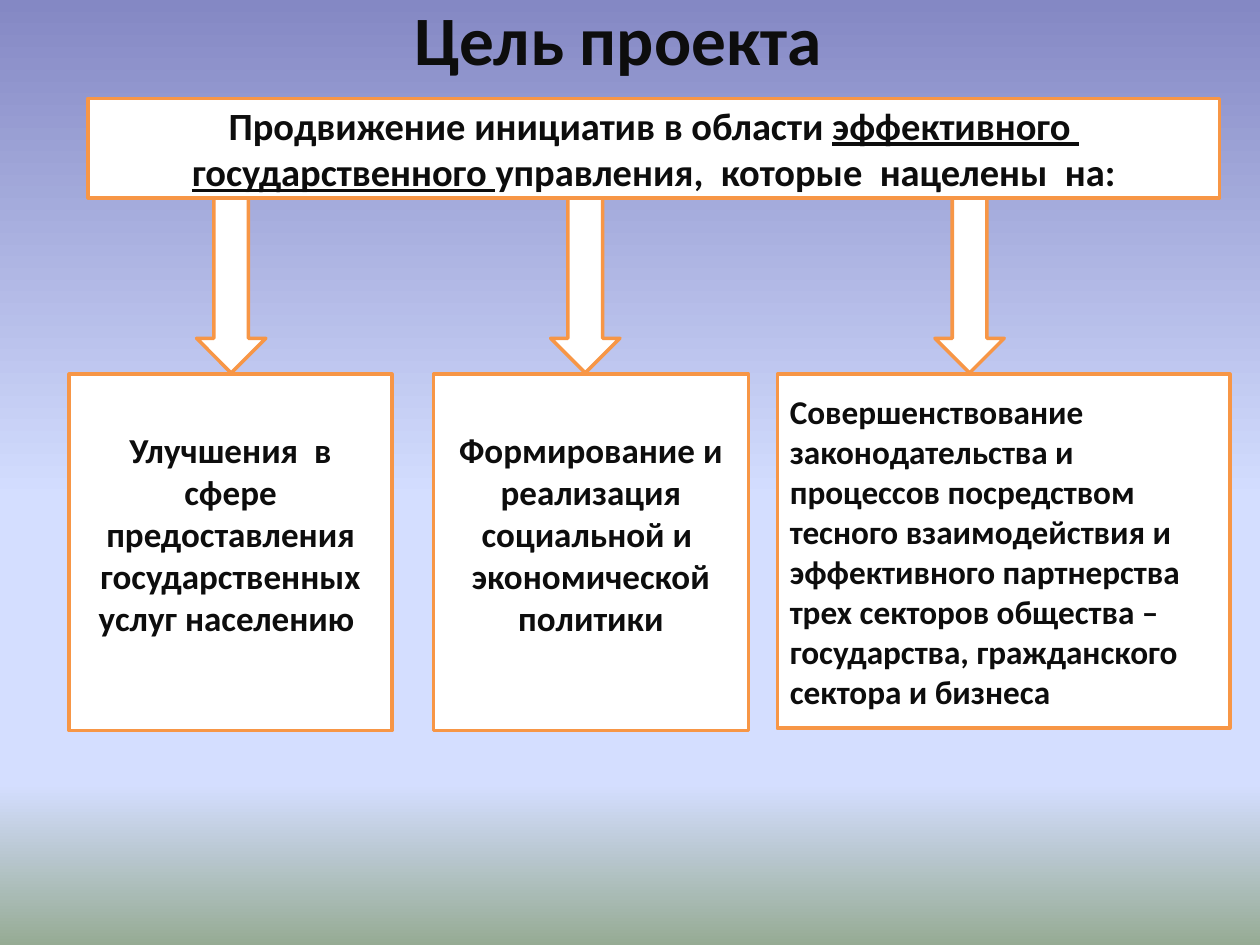
import pptx
import pptx.dml.color
import pptx.enum.shapes
import pptx.enum.text
import pptx.oxml.ns
import pptx.util
from lxml import etree

Inches = pptx.util.Inches
Pt = pptx.util.Pt
RGBColor = pptx.dml.color.RGBColor
MSO_SHAPE = pptx.enum.shapes.MSO_SHAPE
PP_ALIGN = pptx.enum.text.PP_ALIGN
MSO_ANCHOR = pptx.enum.text.MSO_ANCHOR
qn = pptx.oxml.ns.qn

TEXT = RGBColor(0x0D, 0x0D, 0x0D)
WHITE = RGBColor(0xFF, 0xFF, 0xFF)
ORANGE = RGBColor(0xF7, 0x96, 0x46)
SKY = [
    (0, RGBColor(0x84, 0x88, 0xC4)),
    (53, RGBColor(0xD4, 0xDE, 0xFF)),
    (83, RGBColor(0xD4, 0xDE, 0xFF)),
    (100, RGBColor(0x96, 0xAB, 0x94)),
]

GOALS_TOP = 2.97
ARROW_TOP, ARROW_WIDTH, ARROW_HEIGHT = 1.48, 0.55, 1.48
ARROW_LEFTS = (1.56, 4.37, 7.42)

# left, width, height, size, alignment, bottom inset, text
GOALS = [
    (0.55, 2.56, 2.83, 20, PP_ALIGN.CENTER, 0.35,
     "Улучшения  в сфере предоставления государственных услуг населению "),
    (3.44, 2.5, 2.83, 20, PP_ALIGN.CENTER, 0.35,
     "Формирование и реализация социальной и  экономической политики"),
    (6.17, 3.59, 2.81, 19, PP_ALIGN.LEFT, 0.05,
     "Совершенствование законодательства и процессов посредством тесного "
     "взаимодействия и эффективного партнерства трех секторов общества – "
     "государства, гражданского сектора и бизнеса"),
]

# text, underlined
HEADLINE = [
    ("Продвижение инициатив в области ", False),
    ("эффективного ", True),
    (" ", False),
    ("государственного ", True),
    ("управления,  которые  нацелены  на:", False),
]


def set_background(s):
    """Fill the slide with the vertical four-stop gradient."""
    fill = s.background.fill
    fill.gradient()
    grad = s.background._cSld.find(".//" + qn("a:gradFill"))
    stops = grad.find(qn("a:gsLst"))
    for stop in list(stops):
        stops.remove(stop)
    for percent, color in SKY:
        stop = etree.SubElement(stops, qn("a:gs"), pos=str(percent * 1000))
        etree.SubElement(stop, qn("a:srgbClr"), val=str(color))
    grad.find(qn("a:lin")).set("ang", str(90 * 60000))


def write_text(sp, runs, size, align):
    """Write (text, underlined) runs as one bold paragraph."""
    tf = sp.text_frame
    tf.word_wrap = True
    tf.vertical_anchor = MSO_ANCHOR.MIDDLE
    p = tf.paragraphs[0]
    p.alignment = align
    for text, underlined in runs:
        r = p.add_run()
        r.text = text
        r.font.name = "Calibri"
        r.font.size = Pt(size)
        r.font.bold = True
        r.font.underline = underlined
        r.font.color.rgb = TEXT


def add_title(s, text):
    sp = s.shapes.title
    sp.left, sp.top = Inches(0.47), Inches(0)
    sp.width, sp.height = Inches(9), Inches(0.6)
    write_text(sp, [(text, False)], 39.6, PP_ALIGN.CENTER)


def add_outlined(s, kind, left, top, width, height):
    sp = s.shapes.add_shape(
        kind, Inches(left), Inches(top), Inches(width), Inches(height))
    sp.shadow.inherit = False
    sp.fill.solid()
    sp.fill.fore_color.rgb = WHITE
    sp.line.color.rgb = ORANGE
    sp.line.width = Pt(2)
    return sp


def main():
    prs = pptx.Presentation()
    prs.slide_width, prs.slide_height = Inches(10), Inches(7.5)
    s = prs.slides.add_slide(prs.slide_layouts[5])
    set_background(s)
    add_title(s, "Цель проекта ")

    for left, width, height, size, align, inset, text in GOALS:
        sp = add_outlined(s, MSO_SHAPE.RECTANGLE, left, GOALS_TOP, width, height)
        sp.text_frame.margin_bottom = Inches(inset)
        write_text(sp, [(text, False)], size, align)

    for left in ARROW_LEFTS:
        add_outlined(s, MSO_SHAPE.DOWN_ARROW, left, ARROW_TOP,
                     ARROW_WIDTH, ARROW_HEIGHT)

    headline = add_outlined(s, MSO_SHAPE.RECTANGLE, 0.7, 0.78, 8.98, 0.79)
    write_text(headline, HEADLINE, 22, PP_ALIGN.CENTER)

    prs.save("out.pptx")


if __name__ == "__main__":
    main()
